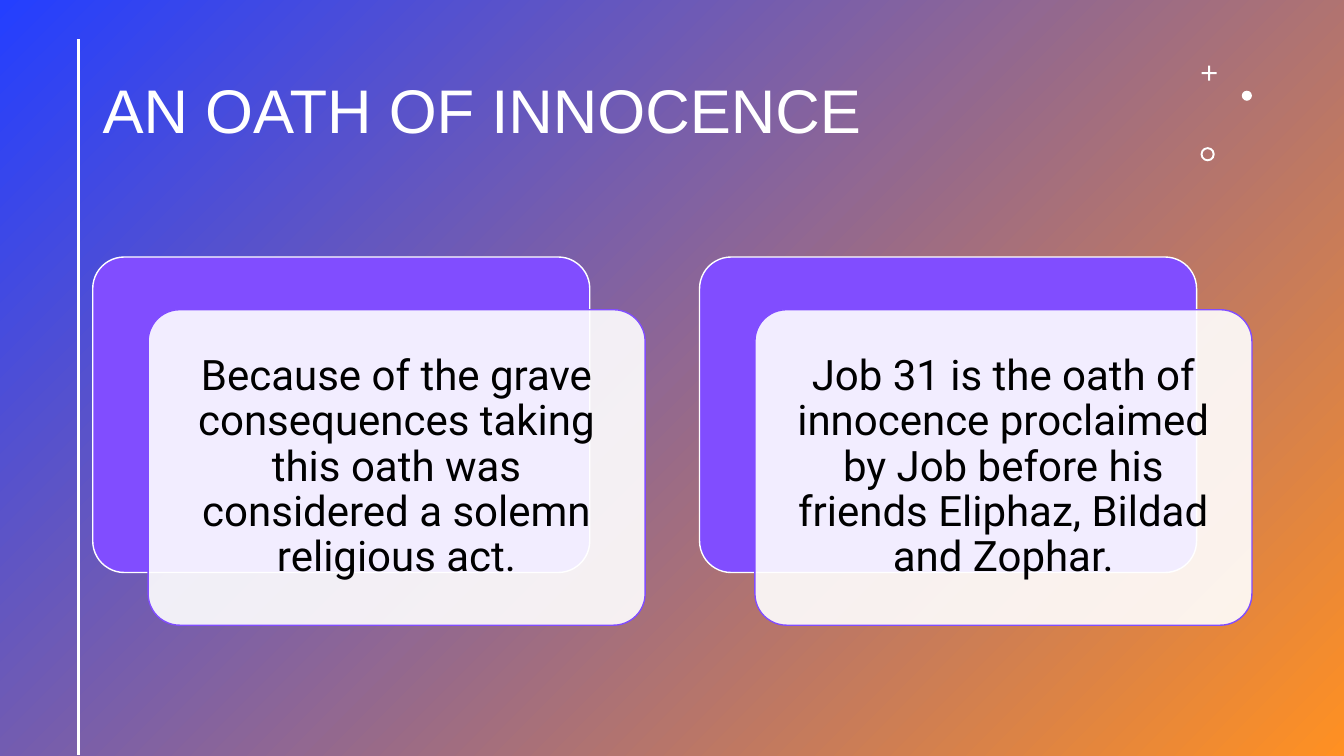
from dataclasses import dataclass

import pptx
import pptx.dml.color
import pptx.enum.shapes
import pptx.enum.text
import pptx.oxml.ns
import pptx.util
from lxml import etree

SHAPE = pptx.enum.shapes.MSO_SHAPE
ALIGN = pptx.enum.text.PP_ALIGN


@dataclass(frozen=True)
class Theme:
    blue: str = "243FFF"
    orange: str = "FF9022"
    violet: str = "814DFF"
    white: str = "FFFFFF"
    black: str = "000000"
    title_font: str = "Arial"
    body_font: str = "Roboto"
    title_size: int = 44
    body_size: int = 30
    rule_width: int = 2
    border_width: int = 1


class Deck:
    """Draws styled elements on one slide, with lengths in percent of its size."""

    def __init__(self, theme):
        self.theme = theme
        self.prs = pptx.Presentation()
        self.prs.slide_width = pptx.util.Inches(13.33)
        self.prs.slide_height = pptx.util.Inches(7.5)
        self.s = self.prs.slides.add_slide(self.prs.slide_layouts[6])

    def x(self, share):
        return round(self.prs.slide_width * share / 100)

    def y(self, share):
        return round(self.prs.slide_height * share / 100)

    def box(self, left, top, width, height):
        return self.x(left), self.y(top), self.x(width), self.y(height)

    def rgb(self, color):
        return pptx.dml.color.RGBColor.from_string(color)

    def shape(self, kind, box, fill=None, line=None, adj=None, alpha=None):
        sp = self.s.shapes.add_shape(kind, *self.box(*box))
        sp.shadow.inherit = False
        if fill:
            sp.fill.solid()
            sp.fill.fore_color.rgb = self.rgb(fill)
        if line:
            sp.line.color.rgb = self.rgb(line)
            sp.line.width = pptx.util.Pt(self.theme.border_width)
        else:
            sp.line.fill.background()
        if adj is not None:
            sp.adjustments[0] = adj
        if alpha is not None:
            clr = sp._element.spPr.find(".//" + pptx.oxml.ns.qn("a:srgbClr"))
            etree.SubElement(clr, pptx.oxml.ns.qn("a:alpha"), val=str(alpha * 1000))
        return sp

    def backdrop(self):
        sp = self.shape(SHAPE.RECTANGLE, (0, 0, 100, 100))
        sp.fill.gradient()
        sp.fill.gradient_angle = 315
        colors = (self.theme.blue, self.theme.orange)
        for stop, position, color in zip(sp.fill.gradient_stops, (0, 1), colors):
            stop.position = position
            stop.color.rgb = self.rgb(color)

    def rule(self, left, top, bottom):
        x = self.x(left)
        ln = self.s.shapes.add_connector(
            pptx.enum.shapes.MSO_CONNECTOR.STRAIGHT, x, self.y(top), x, self.y(bottom))
        ln.line.color.rgb = self.rgb(self.theme.white)
        ln.line.width = pptx.util.Pt(self.theme.rule_width)
        etree.SubElement(ln._element.spPr, pptx.oxml.ns.qn("a:effectLst"))

    def label(self, sp, text, font, size, color, align):
        tf = sp.text_frame
        tf.word_wrap = True
        tf.vertical_anchor = pptx.enum.text.MSO_ANCHOR.MIDDLE
        p = tf.paragraphs[0]
        p.text = text
        p.alignment = align
        p.line_spacing = 0.9
        r = p.runs[0]
        r.font.name = font
        r.font.size = pptx.util.Pt(size)
        r.font.color.rgb = self.rgb(color)

    def title(self, box, text):
        t = self.theme
        sp = self.s.shapes.add_textbox(*self.box(*box))
        self.label(sp, text, t.title_font, t.title_size, t.white, ALIGN.LEFT)

    def card(self, left, top, width, height, text):
        t = self.theme
        self.shape(SHAPE.ROUNDED_RECTANGLE, (left, top, width, height),
                   t.violet, t.white, 0.1)
        sp = self.shape(SHAPE.ROUNDED_RECTANGLE, (left + 4.12, top + 6.97, width, height),
                        t.white, t.violet, 0.1, 90)
        tf = sp.text_frame
        tf.margin_left = tf.margin_right = pptx.util.Inches(0.12)
        tf.margin_top = tf.margin_bottom = pptx.util.Inches(0.12)
        self.label(sp, text, t.body_font, t.body_size, t.black, ALIGN.CENTER)

    def ornaments(self):
        white = self.theme.white
        self.shape(SHAPE.CROSS, (89.4, 8.67, 1.13, 2), white, adj=0.44)
        self.shape(SHAPE.OVAL, (92.4, 12, 0.75, 1.33), white)
        self.shape(SHAPE.DONUT, (89.33, 19.47, 1.05, 1.87), white, adj=0.14)


def main():
    deck = Deck(Theme())
    deck.backdrop()
    deck.title((6.9, 5.33, 80.4, 19.33), "AN OATH OF INNOCENCE")
    deck.rule(5.85, 5.2, 99.9)
    deck.ornaments()
    statements = (
        "Because of the grave consequences taking this oath was "
        "considered a solemn religious act.",
        "Job 31 is the oath of innocence proclaimed by Job before his "
        "friends Eliphaz, Bildad and Zophar.",
    )
    for i, text in enumerate(statements):
        deck.card(6.9 + 45.15 * i, 34, 36.98, 41.73, text)
    deck.prs.save("out.pptx")


if __name__ == "__main__":
    main()
